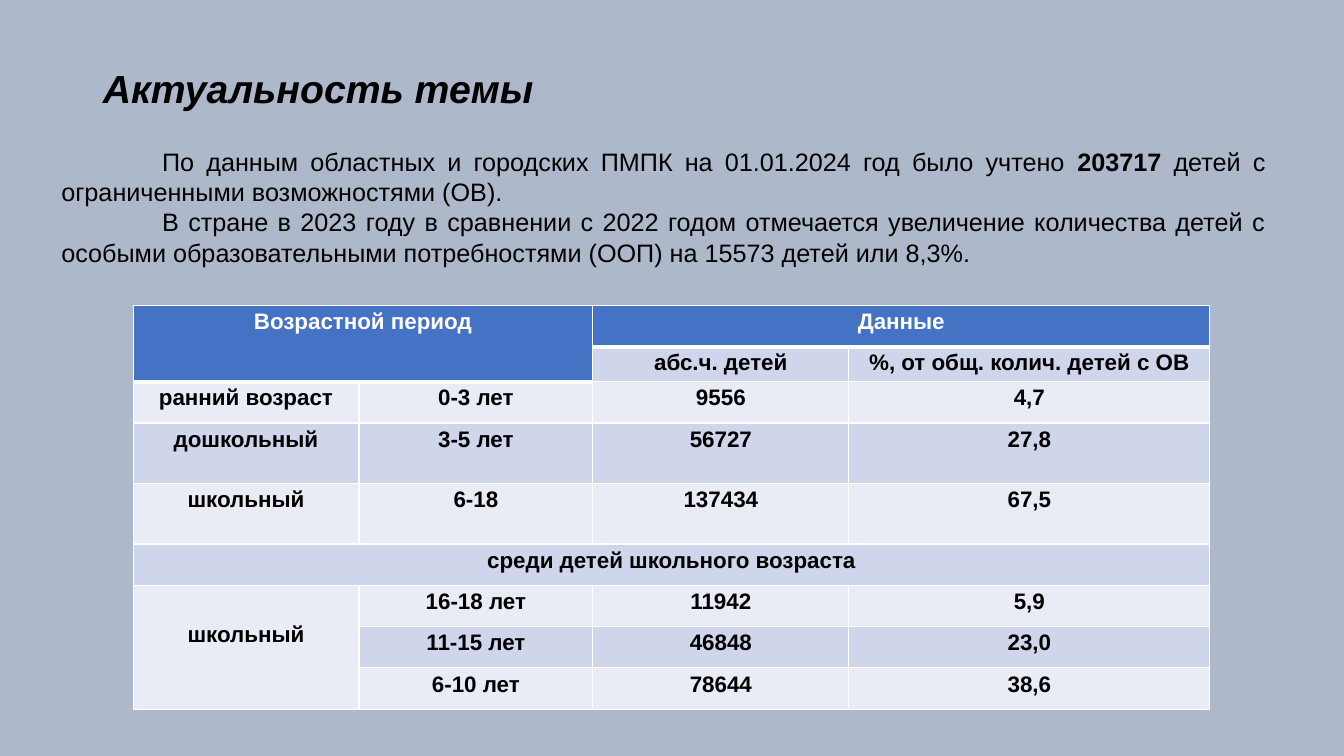
from dataclasses import dataclass

from lxml import etree
from pptx import Presentation
from pptx.dml.color import RGBColor
from pptx.enum.text import MSO_ANCHOR, PP_ALIGN
from pptx.oxml.ns import qn
from pptx.util import Inches, Pt

CENTER, JUSTIFY, LEFT = PP_ALIGN.CENTER, PP_ALIGN.JUSTIFY, PP_ALIGN.LEFT
TOP, MIDDLE = MSO_ANCHOR.TOP, MSO_ANCHOR.MIDDLE
TITLE_ONLY = 5


@dataclass(frozen=True)
class Theme:
    font: str = "Arial"
    background: str = "ADB9CA"
    ink: str = "000000"
    white: str = "FFFFFF"
    header: str = "4472C4"
    bands: tuple = ("E9EBF5", "CFD5EA")
    title_size: int = 28
    body_size: int = 18
    table_size: int = 16
    border: int = 1
    header_border: int = 3


# Content
TITLE = "Актуальность темы"
# Each paragraph is a list of (text, bold) spans
INTRO = [
    [("По данным областных и городских ПМПК на 01.01.2024 год было учтено ", False),
     ("203717", True),
     (" детей с ограниченными возможностями (ОВ).", False)],
    [("В стране в 2023 году в сравнении с 2022 годом отмечается увеличение "
      "количества детей с особыми образовательными потребностями (ООП) "
      "на 15573 детей или 8,3%.", False)],
]
AGE_ROWS = [
    ["Возрастной период", "", "Данные", ""],
    ["", "", "абс.ч. детей", "%, от общ. колич. детей с ОВ"],
    ["ранний возраст", "0-3 лет", "9556", "4,7"],
    ["дошкольный", "3-5 лет", "56727", "27,8"],
    ["школьный", "6-18", "137434", "67,5"],
    ["среди детей школьного возраста", "", "", ""],
    ["школьный", "16-18 лет", "11942", "5,9"],
    ["", "11-15 лет", "46848", "23,0"],
    ["", "6-10 лет", "78644", "38,6"],
]
COLUMN_WIDTHS = [2.24, 2.32, 2.54, 3.58]
ROW_HEIGHTS = [0.41, 0.34, 0.41, 0.6, 0.6] + [0.41] * 4
# First and last cell (row, column) of each merged area
MERGES = [((0, 0), (1, 1)), ((0, 2), (0, 3)), ((5, 0), (5, 3)), ((6, 0), (8, 0))]
SCHOOL_CELL = (6, 0)


def is_header(row, column):
    return row == 0 or (row == 1 and column < 2)


class SlideBuilder:
    def __init__(self, deck, theme):
        self.theme = theme
        self.slide = deck.slides.add_slide(deck.slide_layouts[TITLE_ONLY])
        fill = self.slide.background.fill
        fill.solid()
        fill.fore_color.rgb = RGBColor.from_string(theme.background)

    def format_span(self, span, size, color, bold=False, italic=False):
        font = span.font
        font.name, font.size = self.theme.font, Pt(size)
        font.bold, font.italic = bold, italic
        font.color.rgb = RGBColor.from_string(color)

    def title(self, text, left, top, width, height):
        box = self.slide.shapes.title
        box.left, box.top = Inches(left), Inches(top)
        box.width, box.height = Inches(width), Inches(height)
        box.text_frame.text = text
        box.text_frame.vertical_anchor = MIDDLE
        para = box.text_frame.paragraphs[0]
        para.alignment, para.line_spacing = LEFT, 0.9
        self.format_span(para.runs[0], self.theme.title_size, self.theme.ink, True, True)

    def body(self, paragraphs, left, top, width, height, indent):
        box = self.slide.shapes.add_textbox(
            Inches(left), Inches(top), Inches(width), Inches(height))
        frame = box.text_frame
        frame.word_wrap = True
        for index, spans in enumerate(paragraphs):
            para = frame.add_paragraph() if index else frame.paragraphs[0]
            para.alignment = JUSTIFY
            para._p.get_or_add_pPr().set("indent", str(Inches(indent)))
            for text, bold in spans:
                span = para.add_run()
                span.text = text
                self.format_span(span, self.theme.body_size, self.theme.ink, bold)

    def cell_borders(self, cell, top, bottom):
        properties = cell._tc.get_or_add_tcPr()
        widths = {"a:lnL": self.theme.border, "a:lnR": self.theme.border,
                  "a:lnT": top, "a:lnB": bottom}
        for index, (tag, width) in enumerate(widths.items()):
            line = etree.Element(qn(tag), w=str(Pt(width)))
            fill = etree.SubElement(line, qn("a:solidFill"))
            etree.SubElement(fill, qn("a:srgbClr"), val=self.theme.white)
            properties.insert(index, line)

    def cell(self, cell, text, row, column):
        theme, header = self.theme, is_header(row, column)
        cell.margin_top = cell.margin_bottom = Inches(0.04)
        cell.vertical_anchor = TOP
        cell.fill.solid()
        color = theme.header if header else theme.bands[row % 2]
        cell.fill.fore_color.rgb = RGBColor.from_string(color)
        below_header = row > 0 and is_header(row - 1, column)
        self.cell_borders(cell,
                          theme.header_border if below_header else theme.border,
                          theme.header_border if header else theme.border)
        if text:
            cell.text_frame.text = text
            para = cell.text_frame.paragraphs[0]
            para.alignment = CENTER
            self.format_span(para.runs[0], theme.table_size,
                             theme.white if header else theme.ink, True)

    def table(self, rows, widths, heights, merges, left, top):
        table = self.slide.shapes.add_table(
            len(rows), len(widths), Inches(left), Inches(top),
            Inches(sum(widths)), Inches(sum(heights))).table
        for column, width in zip(table.columns, widths):
            column.width = Inches(width)
        for table_row, height in zip(table.rows, heights):
            table_row.height = Inches(height)
        for row, texts in enumerate(rows):
            for column, text in enumerate(texts):
                self.cell(table.cell(row, column), text, row, column)
        for first, last in merges:
            table.cell(*first).merge(table.cell(*last))
        return table


def main():
    deck = Presentation()
    deck.slide_width, deck.slide_height = Inches(13.33), Inches(7.5)
    page = SlideBuilder(deck, Theme())

    # Heading and introduction
    page.title(TITLE, 0.92, 0.4, 11.5, 1)
    page.body(INTRO, 0.51, 1.4, 12.14, 1.31, indent=1)

    # Children by age period
    table = page.table(AGE_ROWS, COLUMN_WIDTHS, ROW_HEIGHTS, MERGES, 1.32, 3.03)
    school = table.cell(*SCHOOL_CELL)
    school.vertical_anchor = MIDDLE
    school.margin_bottom = Inches(0.28)

    deck.save("out.pptx")


if __name__ == "__main__":
    main()
